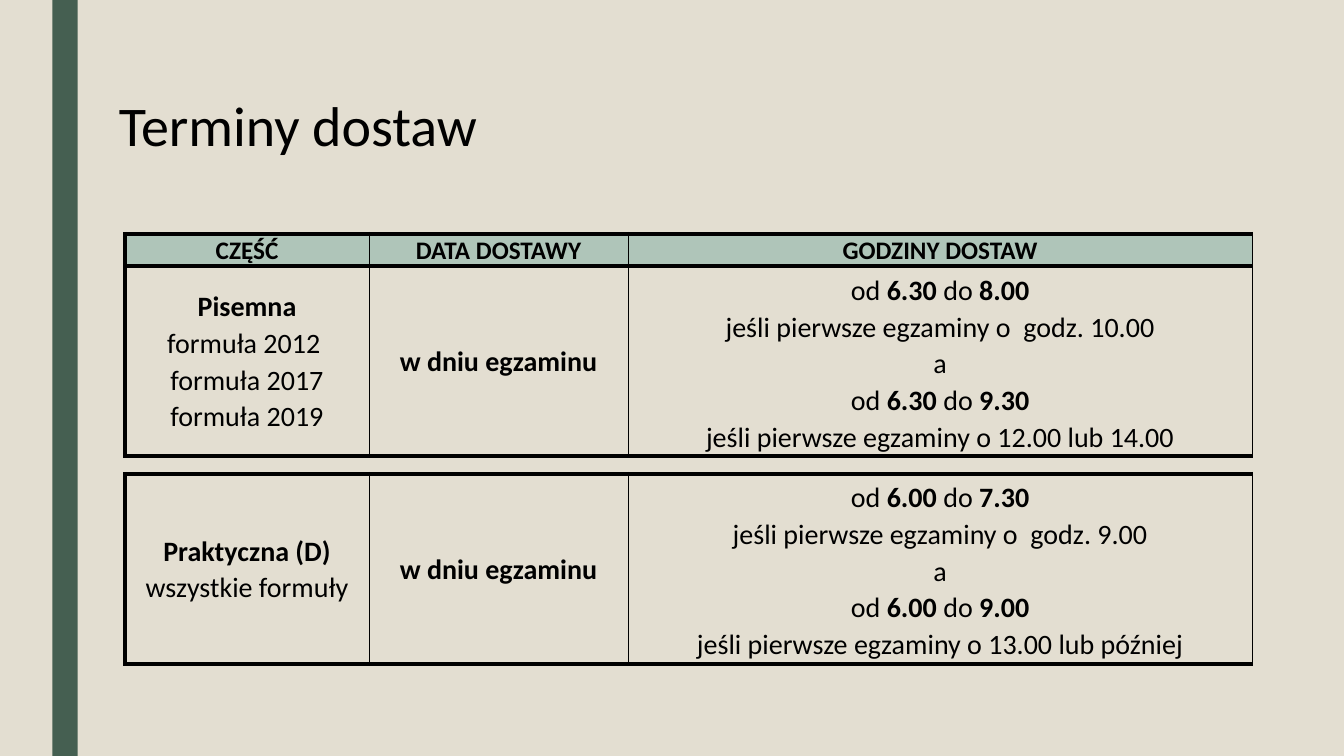
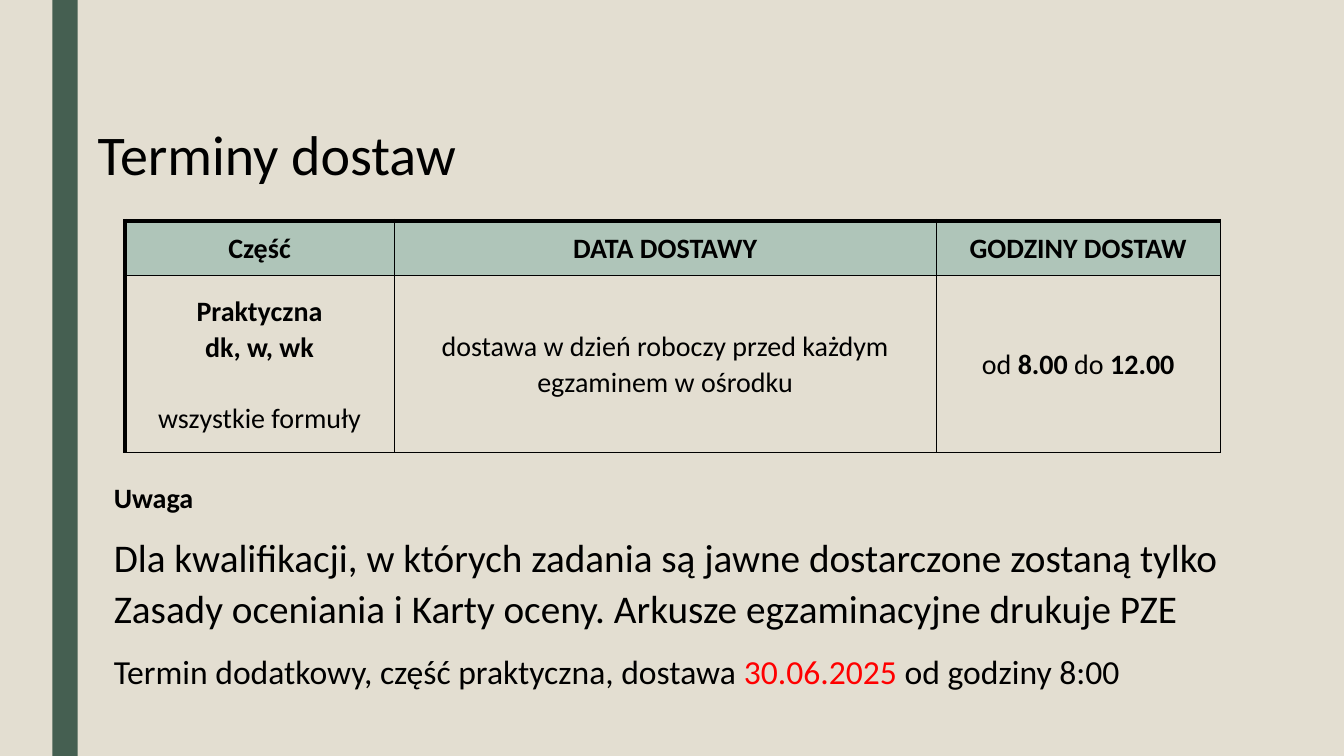
from dataclasses import dataclass

import lxml.etree
import pptx
import pptx.dml.color
import pptx.enum.shapes
import pptx.enum.text
import pptx.oxml.ns
import pptx.util

Pt = pptx.util.Pt
RGB = pptx.dml.color.RGBColor.from_string
ALIGN = pptx.enum.text.PP_ALIGN
ANCHOR = pptx.enum.text.MSO_ANCHOR
AUTO_SIZE = pptx.enum.text.MSO_AUTO_SIZE


@dataclass(frozen=True)
class Theme:
    background: str = "E3DED1"
    stripe: str = "455F51"
    header: str = "AFC5B9"
    ink: str = "000000"
    alert: str = "FF0000"
    font: str = "Calibri"
    title: int = 40
    statement: int = 28
    extra: int = 24
    body: int = 20
    small: int = 18
    line_spacing: float = 1.07
    thick: float = 3
    thin: float = 0.75


@dataclass(frozen=True)
class Box:
    left: float
    top: float
    width: float
    height: float


THEME = Theme()
WIDTH = pptx.util.Inches(13.333)
HEIGHT = pptx.util.Inches(7.5)
STRIPE = Box(3.9, 0, 1.88, 100)
BOLD = {"bold": True}
RED = {"color": THEME.alert}


def place(box):
    return [int(share * side / 100) for share, side in
            zip((box.left, box.top, box.width, box.height), (WIDTH, HEIGHT) * 2)]


def apply(target, formats):
    for name, value in formats.items():
        setattr(target, name, value)


def write_paragraph(paragraph, text, size, emphasis=BOLD, **formats):
    """Text between bars takes the emphasis."""
    apply(paragraph, formats)
    for part, piece in enumerate(text.split("|")):
        style = {"bold": False, "color": THEME.ink, **(emphasis if part % 2 else {})}
        for row, words in enumerate(piece.split("\n")):
            if row:
                paragraph.add_line_break()
            if words:
                run = paragraph.add_run()
                run.text = words
                apply(run.font, {"name": THEME.font, "size": Pt(size), "bold": style["bold"]})
                run.font.color.rgb = RGB(style["color"])


def paragraphs_of(frame, count):
    return [frame.paragraphs[0]] + [frame.add_paragraph() for _ in range(count - 1)]


def add_base(presentation, title_box):
    slide = presentation.slides.add_slide(presentation.slide_layouts[6])
    stripe = slide.shapes.add_shape(pptx.enum.shapes.MSO_SHAPE.RECTANGLE, *place(STRIPE))
    stripe.shadow.inherit = False
    stripe.fill.solid()
    stripe.fill.fore_color.rgb = RGB(THEME.stripe)
    stripe.line.fill.background()
    frame = slide.shapes.add_textbox(*place(title_box)).text_frame
    apply(frame, {"word_wrap": False, "auto_size": AUTO_SIZE.SHAPE_TO_FIT_TEXT})
    write_paragraph(frame.paragraphs[0], "Terminy dostaw", THEME.title, alignment=ALIGN.CENTER)
    return slide


def set_borders(cell, widths):
    properties = cell._tc.get_or_add_tcPr()
    for side, width in widths.items():
        line = lxml.etree.SubElement(properties, pptx.oxml.ns.qn(f"a:ln{side}"), w=str(Pt(width)))
        fill = lxml.etree.SubElement(line, pptx.oxml.ns.qn("a:solidFill"))
        lxml.etree.SubElement(fill, pptx.oxml.ns.qn("a:srgbClr"), val=THEME.ink)


def fill_cell(cell, content, size, color, padding, gap):
    margin = pptx.util.Inches(0.05)
    apply(cell, {"vertical_anchor": ANCHOR.MIDDLE, "margin_left": margin, "margin_right": margin,
                 "margin_top": margin * padding, "margin_bottom": margin * padding})
    cell.fill.solid()
    cell.fill.fore_color.rgb = RGB(color)
    last = len(content) - 1
    for index, paragraph in enumerate(paragraphs_of(cell.text_frame, len(content))):
        write_paragraph(paragraph, content[index], size, alignment=ALIGN.CENTER,
                        line_spacing=THEME.line_spacing,
                        space_after=Pt(gap if index < last else 0))


def add_schedule(slide, box, columns, rows, cells, header_size=None, ruled=True, gap=0):
    left, top, width, height = place(box)
    table = slide.shapes.add_table(len(rows), len(columns), left, top, width, height).table
    apply(table, {"first_row": False, "horz_banding": False})
    for column, share in zip(table.columns, columns):
        column.width = int(width * share / sum(columns))
    for row, share in zip(table.rows, rows):
        row.height = int(height * share / sum(rows))
    inner = THEME.thick if ruled else THEME.thin
    for r, contents in enumerate(cells):
        is_header = header_size is not None and r == 0
        for c, content in enumerate(contents):
            cell = table.cell(r, c)
            set_borders(cell, {"L": THEME.thin if c else THEME.thick, "R": THEME.thin,
                               "T": inner if r else THEME.thick, "B": inner})
            padded = ruled and not is_header and c == len(columns) - 1
            fill_cell(cell, content, header_size if is_header else THEME.body,
                      THEME.header if is_header else THEME.background, int(padded), gap)


def add_notice(slide, box, lines):
    frame = slide.shapes.add_textbox(*place(box)).text_frame
    apply(frame, {"word_wrap": True, "auto_size": AUTO_SIZE.SHAPE_TO_FIT_TEXT})
    for paragraph, (text, size, emphasis) in zip(paragraphs_of(frame, len(lines)), lines):
        write_paragraph(paragraph, text, size, emphasis, alignment=ALIGN.LEFT,
                        line_spacing=THEME.line_spacing, space_after=Pt(12))


def header_row(first):
    return [[f"|{label}|"] for label in (first, "DATA DOSTAWY", "GODZINY DOSTAW")]


def delivery_hours(start, early_end, early_exams, late_end, late_exams):
    return [f"od |{start}| do |{early_end}|\njeśli pierwsze egzaminy o  godz. {early_exams}",
            f"a\nod |{start}| do |{late_end}|\njeśli pierwsze egzaminy o {late_exams}"]


def build_exam_day_slide(presentation):
    slide = add_base(presentation, Box(7.95, 11.33, 28.43, 10.27))
    columns = (2.42, 2.57, 6.19)
    exam_day = ["|w dniu egzaminu|"]
    written = [["|Pisemna|\nformuła 2012 \nformuła 2017", "formuła 2019"], exam_day,
               delivery_hours("6.30", "8.00", "10.00", "9.30", "12.00 lub 14.00")]
    practical = [["|Praktyczna (D)|", "wszystkie formuły"], exam_day,
                 delivery_hours("6.00", "7.30", "9.00", "9.00", "13.00 lub później")]
    add_schedule(slide, Box(9.3, 30.93, 83.87, 29.2), columns, (0.32, 1.87),
                 [header_row("CZĘŚĆ"), written], THEME.small)
    add_schedule(slide, Box(9.3, 62.67, 83.87, 24.93), columns, (1,), [practical])


def build_day_before_slide(presentation):
    slide = add_base(presentation, Box(6.38, 15.2, 28.43, 10.27))
    practical = [["|Praktyczna\ndk, w, wk|", "wszystkie formuły"],
                 ["dostawa w dzień roboczy przed każdym egzaminem w ośrodku"],
                 ["od |8.00| do |12.00|"]]
    add_schedule(slide, Box(9.3, 29.2, 81.5, 30.67), (2.67, 5.38, 2.82), (0.54, 1.76),
                 [header_row("Część"), practical], THEME.body, ruled=False, gap=24)
    add_notice(slide, Box(7.73, 62.53, 84.45, 30.53), [
        ("|Uwaga|", THEME.body, BOLD),
        ("Dla kwalifikacji, w których zadania są jawne dostarczone zostaną tylko Zasady "
         "oceniania i Karty oceny. Arkusze egzaminacyjne drukuje PZE", THEME.statement, BOLD),
        ("Termin dodatkowy, część praktyczna, dostawa |30.06.2025| od godziny 8:00",
         THEME.extra, RED)])


def main():
    presentation = pptx.Presentation()
    apply(presentation, {"slide_width": WIDTH, "slide_height": HEIGHT})
    background = presentation.slide_master.background.fill
    background.solid()
    background.fore_color.rgb = RGB(THEME.background)
    build_exam_day_slide(presentation)
    build_day_before_slide(presentation)
    presentation.save("out.pptx")


if __name__ == "__main__":
    main()
